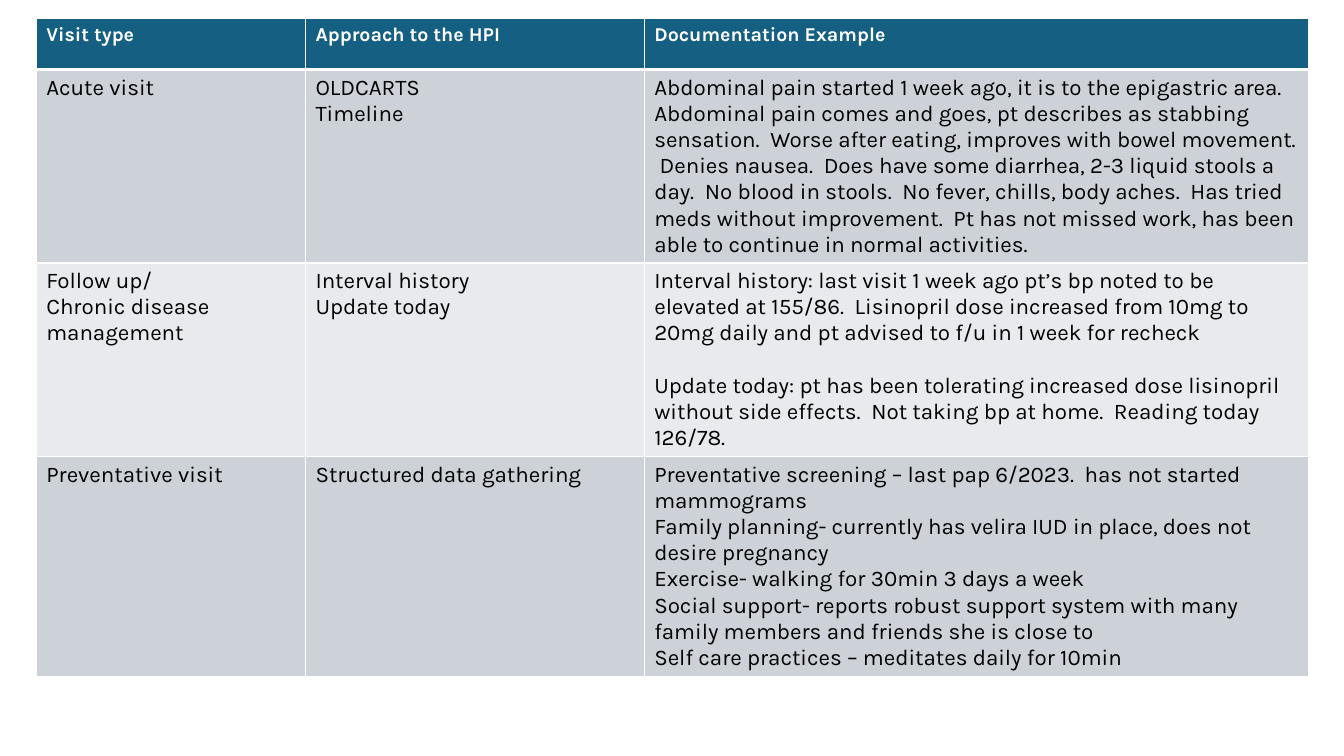
"""Build a slide with a table of visit types, HPI approaches and documentation examples."""
from lxml.etree import SubElement
from pptx import Presentation
from pptx.dml.color import RGBColor
from pptx.oxml.ns import qn
from pptx.util import Inches, Pt


def rgb(color):
    return RGBColor.from_string(color)


def add_border(cell, side, width):
    ln = SubElement(cell._tc.get_or_add_tcPr(), qn(f"a:ln{side}"), w=str(Pt(width)))
    fill = SubElement(ln, qn("a:solidFill"))
    SubElement(fill, qn("a:srgbClr"), val="FFFFFF")


ROWS = [
    ["Visit type", "Approach to the HPI", "Documentation Example"],
    [
        "Acute visit",
        "OLDCARTS\nTimeline",
        "Abdominal pain started 1 week ago, it is to the epigastric area.  "
        "Abdominal pain comes and goes, pt describes as stabbing sensation.  "
        "Worse after eating, improves with bowel movement.  Denies nausea.  "
        "Does have some diarrhea, 2-3 liquid stools a day.  No blood in stools.  "
        "No fever, chills, body aches.  Has tried meds without improvement.  "
        "Pt has not missed work, has been able to continue in normal activities.",
    ],
    [
        "Follow up/\nChronic disease management",
        "Interval history\nUpdate today",
        "Interval history: last visit 1 week ago pt’s bp noted to be elevated at 155/86.  "
        "Lisinopril dose increased from 10mg to 20mg daily and pt advised to f/u "
        "in 1 week for recheck\n"
        "Update today: pt has been tolerating increased dose lisinopril without "
        "side effects.  Not taking bp at home.  Reading today 126/78.",
    ],
    [
        "Preventative visit",
        "Structured data gathering",
        "Preventative screening – last pap 6/2023.  has not started mammograms\n"
        "Family planning- currently has velira IUD in place, does not desire pregnancy\n"
        "Exercise- walking for 30min 3 days a week\n"
        "Social support- reports robust support system with many family members "
        "and friends she is close to\n"
        "Self care practices – meditates daily for 10min",
    ],
]
COL_WIDTHS = [2.67, 3.36, 6.59]
ROW_HEIGHTS = [0.51, 1.92, 1.92, 2.17]
ROW_FILLS = ["156082", "CCD2D8", "E8EAED", "CCD2D8"]

prs = Presentation()
prs.slide_width, prs.slide_height = Inches(13.33), Inches(7.5)
s = prs.slides.add_slide(prs.slide_layouts[6])

table = s.shapes.add_table(
    len(ROWS), len(COL_WIDTHS), Inches(0.36), Inches(0.18),
    Inches(sum(COL_WIDTHS)), Inches(sum(ROW_HEIGHTS)),
).table
for column, width in zip(table.columns, COL_WIDTHS):
    column.width = Inches(width)

for i, texts in enumerate(ROWS):
    table.rows[i].height = Inches(ROW_HEIGHTS[i])
    header = i == 0
    for j, text in enumerate(texts):
        cell = table.cell(i, j)
        add_border(cell, "L", 1)
        add_border(cell, "R", 1)
        add_border(cell, "T", 3 if i == 1 else 1)
        add_border(cell, "B", 3 if header else 1)
        cell.fill.solid()
        cell.fill.fore_color.rgb = rgb(ROW_FILLS[i])
        cell.text_frame.text = text
        for p in cell.text_frame.paragraphs:
            for r in p.runs:
                r.font.name = "Karla"
                r.font.size = Pt(14 if header else 16)
                r.font.bold = header
                r.font.color.rgb = rgb("FFFFFF" if header else "000000")

table.cell(2, 2).text_frame.paragraphs[1].space_before = Pt(18.7)

prs.save("out.pptx")
